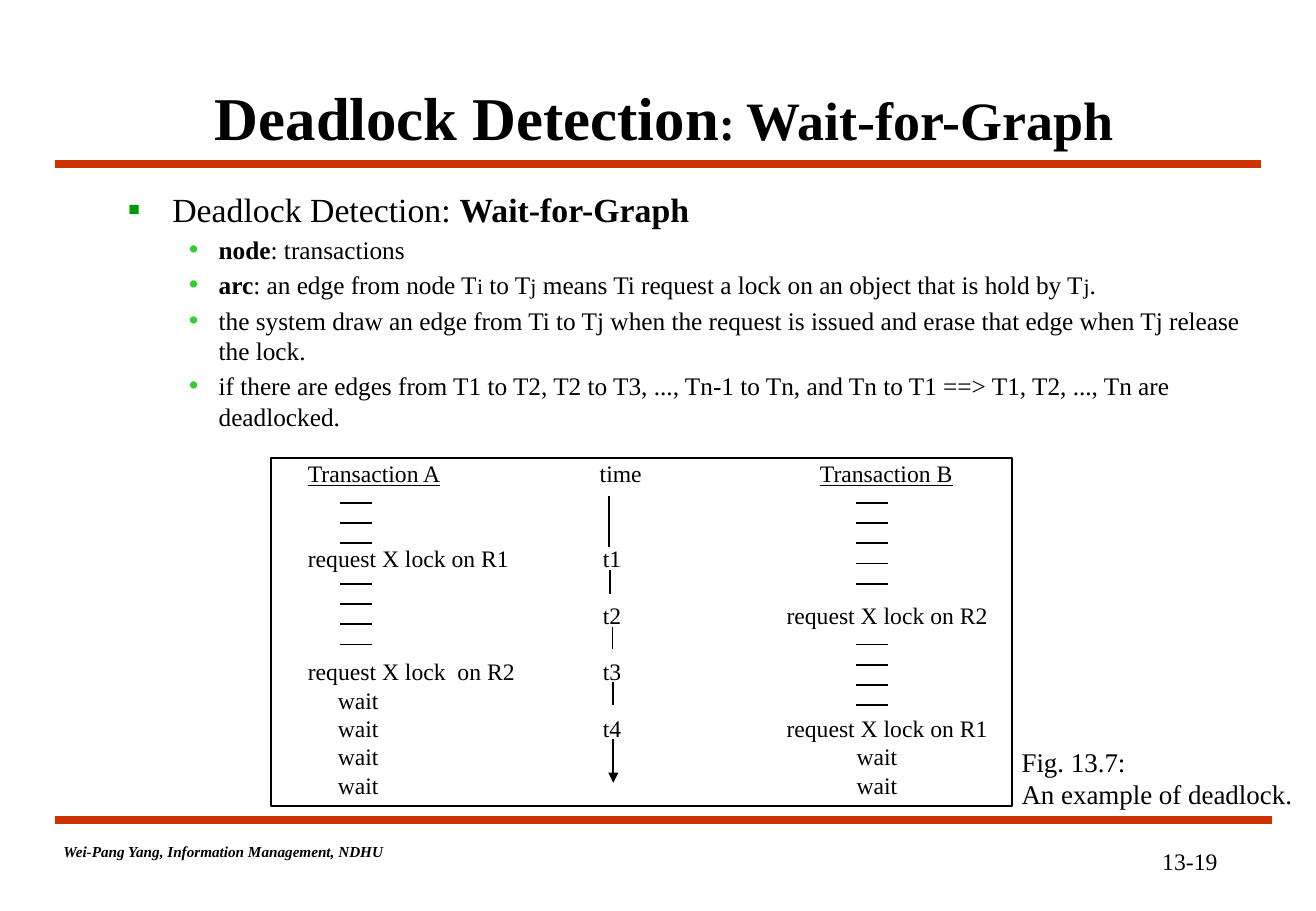
from dataclasses import dataclass

from lxml.etree import SubElement
from pptx import Presentation
from pptx.dml.color import RGBColor
from pptx.enum.shapes import MSO_CONNECTOR as Connector, MSO_SHAPE as Preset
from pptx.enum.text import MSO_ANCHOR as Anchor, MSO_AUTO_SIZE as AutoSize, PP_ALIGN as Align
from pptx.oxml.ns import qn
from pptx.util import Pt

FONT = "Times New Roman"
BLACK = RGBColor(0x00, 0x00, 0x00)
WHITE = RGBColor(0xFF, 0xFF, 0xFF)
RULE_RED = RGBColor(0xCC, 0x33, 0x00)
BULLET_GREEN = RGBColor(0x00, 0x99, 0x00)
BULLET_LIME = RGBColor(0x33, 0xCC, 0x33)
LEADING = 1.2  # line height relative to the font size


@dataclass(frozen=True)
class Piece:
    text: str
    size: float | None = None
    bold: bool | None = None


@dataclass(frozen=True)
class ListStyle:
    size: float
    margin: float
    hanging: float
    before: float
    symbol: str
    colour: RGBColor
    percent: int


@dataclass(frozen=True)
class Label:
    row: int
    left: float
    text: str
    underline: bool = False


@dataclass(frozen=True)
class Segment:
    x1: float
    y1: float
    x2: float
    y2: float
    colour: RGBColor = BLACK
    width: float = 1
    arrow: bool = False


def set_font(paragraph, size: float) -> None:
    paragraph.font.name = FONT
    paragraph.font.size = Pt(size)
    paragraph.font.color.rgb = BLACK
    paragraph.line_spacing = Pt(size * LEADING)


def add_pieces(paragraph, pieces: list[Piece]) -> None:
    for piece in pieces:
        run = paragraph.add_run()
        run.text = piece.text
        if piece.size:
            run.font.size = Pt(piece.size)
        if piece.bold is not None:
            run.font.bold = piece.bold


def set_bullet(paragraph, style: ListStyle) -> None:
    properties = paragraph._p.get_or_add_pPr()
    properties.set("marL", str(Pt(style.margin)))
    properties.set("indent", str(Pt(-style.hanging)))
    colour = SubElement(properties, qn("a:buClr"))
    SubElement(colour, qn("a:srgbClr"), val=str(style.colour))
    SubElement(properties, qn("a:buSzPct"), val=str(style.percent * 1000))
    SubElement(properties, qn("a:buFont"), typeface=FONT)
    SubElement(properties, qn("a:buChar"), char=style.symbol)


def place(shape, left: float, top: float, width: float, height: float) -> None:
    shape.left, shape.top = Pt(left), Pt(top)
    shape.width, shape.height = Pt(width), Pt(height)


def add_text(slide, left: float, top: float, width: float, height: float,
             text: str, size: float, align: Align = Align.LEFT):
    """Add an unwrapped, vertically centred text without insets."""
    box = slide.shapes.add_textbox(Pt(left), Pt(top), Pt(width), Pt(height))
    frame = box.text_frame
    frame.word_wrap = False
    frame.vertical_anchor = Anchor.MIDDLE
    frame.margin_left = frame.margin_right = frame.margin_top = frame.margin_bottom = 0
    paragraph = frame.paragraphs[0]
    paragraph.text = text
    paragraph.alignment = align
    set_font(paragraph, size)
    return paragraph


def add_segment(slide, segment: Segment) -> None:
    connector = slide.shapes.add_connector(
        Connector.STRAIGHT, Pt(segment.x1), Pt(segment.y1), Pt(segment.x2), Pt(segment.y2))
    connector.line.color.rgb = segment.colour
    connector.line.width = Pt(segment.width)
    if segment.arrow:
        SubElement(connector.line._get_or_add_ln(), qn("a:tailEnd"), type="triangle")
    SubElement(connector._element.spPr, qn("a:effectLst"))


TOPIC = ListStyle(20, 62.5, 26.5, 0, "▪", BULLET_GREEN, 110)
POINT = ListStyle(15, 90, 18, 3, "•", BULLET_LIME, 120)
OUTLINE = [
    (TOPIC, [Piece("Deadlock Detection: "), Piece("Wait-for-Graph", bold=True)]),
    (POINT, [Piece("node", bold=True), Piece(": transactions")]),
    (POINT, [Piece("arc", bold=True), Piece(": an edge from node T"), Piece("i", 13),
             Piece(" to T"), Piece("j", 13),
             Piece(" means Ti request a lock on an object that is hold by T"),
             Piece("j", 13), Piece(".")]),
    (POINT, [Piece("the system draw an edge from Ti to Tj when the request is issued "
                   "and erase that edge when Tj release the lock.")]),
    (POINT, [Piece("if there are edges from T1 to T2, T2 to T3, ..., Tn-1 to Tn, "
                   "and Tn to T1 ==> T1, T2, ..., Tn are deadlocked.")]),
]

# Schedule grid: text rows and the short strokes for other operations
ROW_TOP, ROW_PITCH = 272, 16.8
STROKE_TOP, STROKE_PITCH, STROKE_LENGTH = 298, 12, 18.7
A_LEFT, A_WAIT, TIME_LEFT, B_LEFT, B_WAIT = 182.5, 200.3, 357.4, 466.2, 507.7
LABELS = [
    Label(0, A_LEFT, "Transaction A", True),
    Label(0, 355.5, "time"),
    Label(0, 486, "Transaction B", True),
    Label(3, A_LEFT, "request X lock on R1"),
    Label(5, B_LEFT, "request X lock on R2"),
    Label(7, A_LEFT, "request X lock  on R2"),
    Label(9, B_LEFT, "request X lock on R1"),
    *(Label(row, TIME_LEFT, f"t{moment}") for moment, row in enumerate((3, 5, 7, 9), 1)),
    *(Label(row, A_WAIT, "wait") for row in range(8, 12)),
    *(Label(row, B_WAIT, "wait") for row in range(10, 12)),
]
STROKES = {201.6: (0, 1, 2, 4, 5, 6, 7), 507.6: (0, 1, 2, 3, 4, 7, 8, 9, 10)}
TIME_AXIS = [
    Segment(361, 294, 361, 324),
    Segment(361.5, 338, 361.5, 352),
    Segment(363, 371.5, 363, 385),
    Segment(363.5, 404, 363.5, 418),
    Segment(363.5, 438, 363.5, 464, arrow=True),
]
RULES = [Segment(32.4, 486, 753.8, 486, RULE_RED, 4.5),
         Segment(32.4, 97.2, 747.4, 97.2, RULE_RED, 4.5)]


def main() -> None:
    deck = Presentation()
    deck.slide_width, deck.slide_height = Pt(780), Pt(540)
    slide = deck.slides.add_slide(deck.slide_layouts[1])

    # Red rules and footer
    for rule in RULES:
        add_segment(slide, rule)
    add_text(slide, 680.4, 498.2, 49.7, 24.5, "13-19", 14, Align.CENTER)
    author = add_text(slide, 37.6, 495.4, 220, 18, "Wei-Pang Yang, Information Management, NDHU", 9)
    author.font.bold = author.font.italic = True

    # Title
    title = slide.shapes.title
    place(title, 72, 48.2, 643.7, 41.8)
    title.text_frame.auto_size = AutoSize.NONE
    title.text_frame.vertical_anchor = Anchor.MIDDLE
    heading = title.text_frame.paragraphs[0]
    heading.alignment = Align.CENTER
    set_font(heading, 36)
    heading.font.bold = True
    add_pieces(heading, [Piece("Deadlock Detection"), Piece(": ", 28), Piece("Wait-for-Graph", 32)])

    # Outline
    outline = slide.placeholders[1]
    place(outline, 32.4, 108, 715, 365.8)
    outline.text_frame.auto_size = AutoSize.NONE
    for index, (style, pieces) in enumerate(OUTLINE):
        frame = outline.text_frame
        item = frame.add_paragraph() if index else frame.paragraphs[0]
        item.level = 0 if style is TOPIC else 1
        set_font(item, style.size)
        item.space_before = Pt(style.before)
        set_bullet(item, style)
        add_pieces(item, pieces)

    # Schedule of the two transactions
    panel = slide.shapes.add_shape(Preset.RECTANGLE, Pt(160.6), Pt(271.4), Pt(439.2), Pt(206.6))
    panel.shadow.inherit = False
    panel.fill.solid()
    panel.fill.fore_color.rgb = WHITE
    panel.line.color.rgb = BLACK
    panel.line.width = Pt(1)
    for label in LABELS:
        entry = add_text(slide, label.left, ROW_TOP + label.row * ROW_PITCH,
                         125, ROW_PITCH, label.text, 14)
        entry.font.underline = label.underline
    for left, steps in STROKES.items():
        for step in steps:
            y = STROKE_TOP + step * STROKE_PITCH
            add_segment(slide, Segment(left, y, left + STROKE_LENGTH, y))
    for segment in TIME_AXIS:
        add_segment(slide, segment)

    # Figure caption
    add_text(slide, 605.5, 441.4, 163, 38.8, "Fig. 13.7:\vAn example of deadlock.", 16)

    deck.save("out.pptx")


if __name__ == "__main__":
    main()
